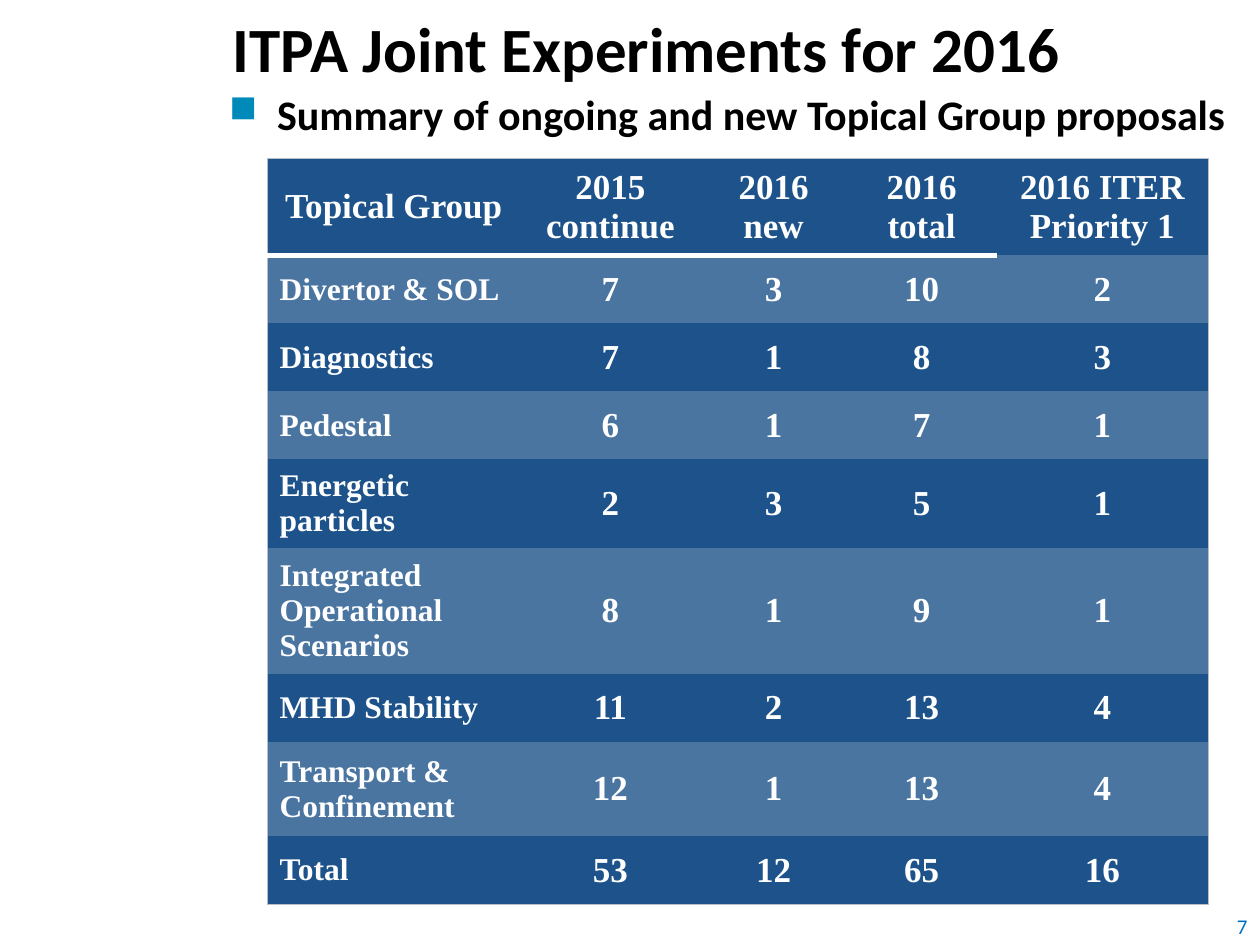
from lxml.etree import SubElement
from pptx import Presentation
from pptx.dml.color import RGBColor
from pptx.enum.text import MSO_ANCHOR, PP_ALIGN
from pptx.oxml.ns import qn
from pptx.util import Inches, Pt

WIDTH, HEIGHT = Inches(10), Inches(7.5)

BLACK = RGBColor(0x00, 0x00, 0x00)
WHITE = RGBColor(0xFF, 0xFF, 0xFF)
DARK_BLUE = RGBColor(0x1D, 0x53, 0x8A)
LIGHT_BLUE = RGBColor(0x4A, 0x75, 0xA1)
NUMBER_BLUE = RGBColor(0x00, 0x70, 0xC0)
BULLET_BLUE = RGBColor(0x00, 0x8A, 0xB9)
EDGE_GRAY = RGBColor(0xB9, 0xBF, 0xC9)

HEADING_FONT, TABLE_FONT = "Calibri", "Times New Roman"
NO_GRID_STYLE = "{2D5ABB26-0587-4C30-8999-92F81FD0307C}"

# Boxes: left, top, width, height in percent of the slide
TITLE_BOX = (17.5, 0, 80.7, 10)
SUMMARY_BOX = (17.2, 8.67, 82.8, 12.93)
TABLE_BOX = (21.2, 16.8, 74.7, 70.4)
NUMBER_BOX = (94.5, 96, 5.5, 4)

COLUMN_WEIGHTS = (2.01, 1.43, 1.16, 1.19, 1.68)
ROW_WEIGHTS = (0.75, 0.54, 0.54, 0.54, 0.54, 0.54, 0.54, 0.75, 0.54)
RULED_COLUMNS = 4

PROPOSALS = (
    ("Topical Group", "2015\ncontinue", "2016\nnew", "2016\ntotal", "2016 ITER\nPriority 1"),
    ("Divertor & SOL", 7, 3, 10, 2),
    ("Diagnostics", 7, 1, 8, 3),
    ("Pedestal", 6, 1, 7, 1),
    ("Energetic particles", 2, 3, 5, 1),
    ("Integrated Operational Scenarios", 8, 1, 9, 1),
    ("MHD Stability", 11, 2, 13, 4),
    ("Transport & Confinement", 12, 1, 13, 4),
    ("Total", 53, 12, 65, 16),
)


def place(box):
    """Turn a box in percent into slide lengths."""
    left, top, width, height = box
    return (int(WIDTH * left / 100), int(HEIGHT * top / 100),
            int(WIDTH * width / 100), int(HEIGHT * height / 100))


def format_runs(paragraph, font_name, size, color, bold=True):
    for run in paragraph.runs:
        run.font.name = font_name
        run.font.size = Pt(size)
        run.font.bold = bold
        run.font.color.rgb = color


def add_text(slide, box, text, size, color, bold=True):
    """Add a one-paragraph text box and return its text frame."""
    text_frame = slide.shapes.add_textbox(*place(box)).text_frame
    text_frame.word_wrap = True
    text_frame.text = text
    format_runs(text_frame.paragraphs[0], HEADING_FONT, size, color, bold)
    return text_frame


def add_title(slide, box):
    text_frame = add_text(slide, box, "ITPA Joint Experiments for 2016", 36, BLACK)
    text_frame.vertical_anchor = MSO_ANCHOR.MIDDLE


def add_summary(slide, box):
    text_frame = add_text(
        slide, box, "Summary of ongoing and new Topical Group proposals", 24, BLACK)
    paragraph = text_frame.paragraphs[0]
    paragraph.space_after = Pt(12)
    properties = paragraph._p.get_or_add_pPr()
    properties.set("marL", str(Inches(0.38)))
    properties.set("indent", str(-Inches(0.38)))
    bullet_color = SubElement(properties, qn("a:buClr"))
    SubElement(bullet_color, qn("a:srgbClr"), val=str(BULLET_BLUE))
    SubElement(properties, qn("a:buSzPct"), val="90000")
    SubElement(properties, qn("a:buChar"), char="■")


def add_page_number(slide, box):
    text_frame = add_text(slide, box, "7", 12, NUMBER_BLUE, bold=False)
    text_frame.paragraphs[0].alignment = PP_ALIGN.RIGHT


def add_border(cell, side, color, width):
    line = SubElement(cell._tc.get_or_add_tcPr(), qn(f"a:ln{side}"), w=str(Pt(width)))
    fill = SubElement(line, qn("a:solidFill"))
    SubElement(fill, qn("a:srgbClr"), val=str(color))


def add_borders(cell, row, column):
    """Draw the outer edge of the table and the rule below its header."""
    if column == 0:
        add_border(cell, "L", EDGE_GRAY, 0.75)
    if column == len(COLUMN_WEIGHTS) - 1:
        add_border(cell, "R", EDGE_GRAY, 0.75)
    if row == 0:
        add_border(cell, "T", EDGE_GRAY, 0.75)
        if column < RULED_COLUMNS:
            add_border(cell, "B", WHITE, 3)
    if row == len(ROW_WEIGHTS) - 1:
        add_border(cell, "B", EDGE_GRAY, 0.75)


def fill_cell(cell, row, column, value):
    is_group_name = row > 0 and column == 0
    cell.vertical_anchor = MSO_ANCHOR.MIDDLE
    cell.text_frame.text = str(value)
    for paragraph in cell.text_frame.paragraphs:
        paragraph.alignment = PP_ALIGN.LEFT if is_group_name else PP_ALIGN.CENTER
        format_runs(paragraph, TABLE_FONT, 18 if is_group_name else 20, WHITE)
    add_borders(cell, row, column)
    cell.fill.solid()
    cell.fill.fore_color.rgb = LIGHT_BLUE if row % 2 else DARK_BLUE


def add_proposal_table(slide, box):
    left, top, width, height = place(box)
    table = slide.shapes.add_table(
        len(ROW_WEIGHTS), len(COLUMN_WEIGHTS), left, top, width, height).table
    table._tbl.tblPr.find(qn("a:tableStyleId")).text = NO_GRID_STYLE
    for column, weight in zip(table.columns, COLUMN_WEIGHTS):
        column.width = int(width * weight / sum(COLUMN_WEIGHTS))
    for row, weight in zip(table.rows, ROW_WEIGHTS):
        row.height = int(height * weight / sum(ROW_WEIGHTS))
    for row, values in enumerate(PROPOSALS):
        for column, value in enumerate(values):
            fill_cell(table.cell(row, column), row, column, value)


def main():
    presentation = Presentation()
    presentation.slide_width, presentation.slide_height = WIDTH, HEIGHT
    slide = presentation.slides.add_slide(presentation.slide_layouts[6])
    add_page_number(slide, NUMBER_BOX)
    add_title(slide, TITLE_BOX)
    add_summary(slide, SUMMARY_BOX)
    add_proposal_table(slide, TABLE_BOX)
    presentation.save("out.pptx")


if __name__ == "__main__":
    main()
